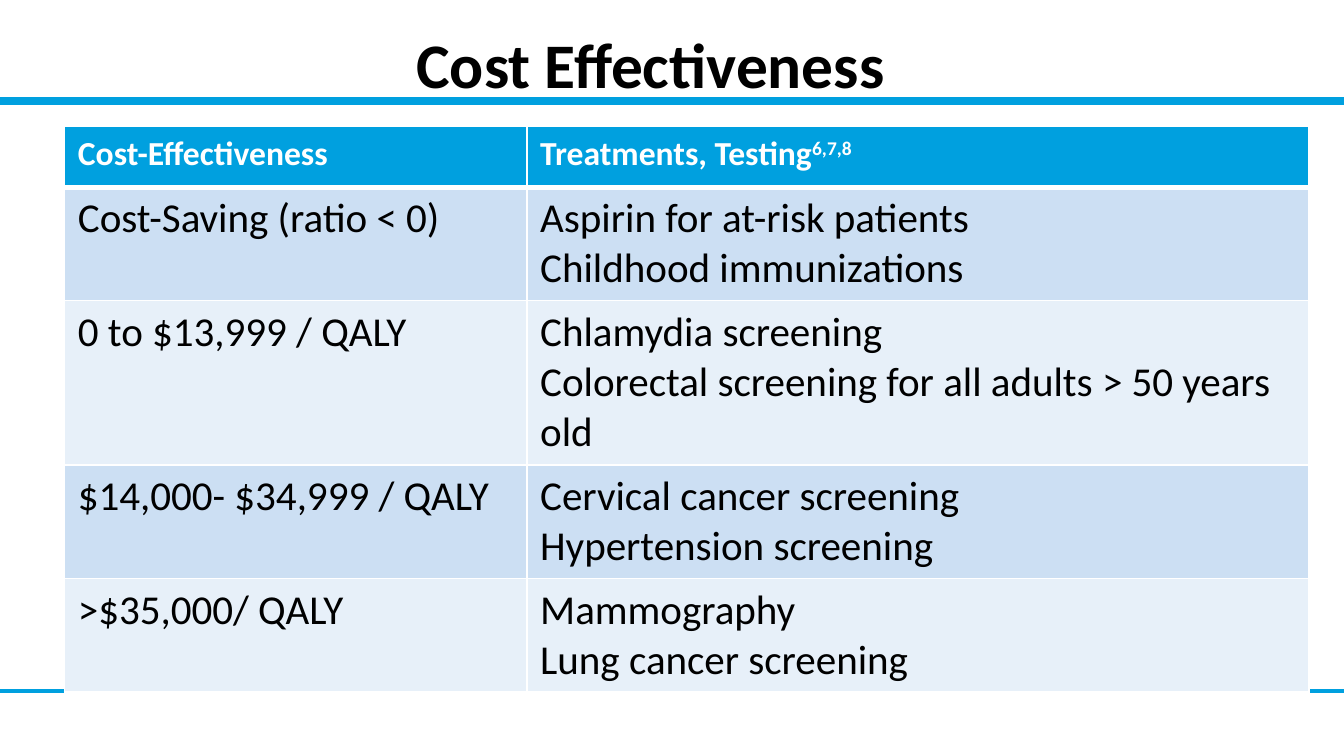
from lxml import etree
from pptx import Presentation
from pptx import util as u
from pptx.dml.color import RGBColor
from pptx.enum import shapes, text
from pptx.oxml.ns import qn

BLUE = RGBColor(0x00, 0xA0, 0xDF)
LIGHT_BLUE = RGBColor(0xCC, 0xDF, 0xF3)
PALE_BLUE = RGBColor(0xE7, 0xF0, 0xF9)
WHITE = RGBColor(0xFF, 0xFF, 0xFF)
BLACK = RGBColor(0x00, 0x00, 0x00)

FONT = "Calibri"
WIDTH = u.Inches(10)
HEIGHT = WIDTH * 9 // 16
COLUMN_WEIGHTS = [3.44, 5.82]
ROW_WEIGHTS = [0.45, 0.84, 1.22, 0.84, 0.84]

HEADINGS = [("Cost-Effectiveness", ""), ("Treatments, Testing", "6,7,8")]
RATINGS = [
    ("Cost-Saving (ratio < 0)",
     ["Aspirin for at-risk patients", "Childhood immunizations"]),
    ("0 to $13,999 / QALY",
     ["Chlamydia screening", "Colorectal screening for all adults > 50 years old"]),
    ("$14,000- $34,999 / QALY",
     ["Cervical cancer screening", "Hypertension screening"]),
    (">$35,000/ QALY",
     ["Mammography", "Lung cancer screening"]),
]


def write(frame, lines, size, color=BLACK, bold=False, superscript=""):
    """Fill a text frame with one paragraph per line, the last one with an optional superscript."""
    frame.word_wrap = True
    for index, line in enumerate(lines):
        paragraph = frame.paragraphs[0] if index == 0 else frame.add_paragraph()
        paragraph.add_run().text = line
        if superscript and index == len(lines) - 1:
            reference = paragraph.add_run()
            reference.text = superscript
            reference.font._element.set("baseline", "30000")
        for run in paragraph.runs:
            run.font.name, run.font.size = FONT, u.Pt(size)
            run.font.bold, run.font.color.rgb = bold, color


def add_rule(slide, y, weight):
    """Draw a rule across the full width of the slide."""
    rule = slide.shapes.add_connector(shapes.MSO_CONNECTOR.STRAIGHT, 0, y, WIDTH, y)
    rule.line.color.rgb, rule.line.width = BLUE, u.Pt(weight)
    etree.SubElement(rule._element.spPr, qn("a:effectLst"))


def add_title(slide, left, top, width, height):
    title = slide.shapes.add_textbox(left, top, width, height).text_frame
    title.vertical_anchor = text.MSO_ANCHOR.MIDDLE
    write(title, ["Cost Effectiveness"], 34, bold=True)


def style_cell(cell, fill, bottom_weight=1, top_weight=1):
    """Set the white borders, then the fill, in the order the schema asks for."""
    properties = cell._tc.get_or_add_tcPr()
    weights = {"a:lnL": 1, "a:lnR": 1, "a:lnT": top_weight, "a:lnB": bottom_weight}
    for side, weight in weights.items():
        border = etree.SubElement(properties, qn(side), w=str(u.Pt(weight)))
        paint = etree.SubElement(border, qn("a:solidFill"))
        etree.SubElement(paint, qn("a:srgbClr"), val=str(WHITE))
    cell.fill.solid()
    cell.fill.fore_color.rgb = fill


def split(length, weights):
    return [int(length * weight / sum(weights)) for weight in weights]


def add_ratings_table(slide, left, top, width, height):
    table = slide.shapes.add_table(
        len(ROW_WEIGHTS), len(COLUMN_WEIGHTS), left, top, width, height).table
    for column, column_width in zip(table.columns, split(width, COLUMN_WEIGHTS)):
        column.width = column_width
    for row, row_height in zip(table.rows, split(height, ROW_WEIGHTS)):
        row.height = row_height

    for column, (heading, references) in enumerate(HEADINGS):
        cell = table.cell(0, column)
        style_cell(cell, BLUE, bottom_weight=3)
        write(cell.text_frame, [heading], 18, WHITE, True, references)

    for row, (ratio, treatments) in enumerate(RATINGS, start=1):
        for column, lines in enumerate([[ratio], treatments]):
            cell = table.cell(row, column)
            style_cell(cell, LIGHT_BLUE if row % 2 else PALE_BLUE,
                       top_weight=3 if row == 1 else 1)
            write(cell.text_frame, lines, 22)


def main():
    presentation = Presentation()
    presentation.slide_width, presentation.slide_height = WIDTH, HEIGHT
    slide = presentation.slides.add_slide(presentation.slide_layouts[6])
    add_rule(slide, u.Inches(5.14), 2)
    add_rule(slide, u.Inches(0.75), 4.5)
    add_title(slide, u.Inches(3), 0, u.Inches(6.29), u.Inches(0.94))
    add_ratings_table(slide, u.Inches(0.48), u.Inches(0.94), u.Inches(9.26), u.Inches(4.21))
    presentation.save("out.pptx")


if __name__ == "__main__":
    main()
